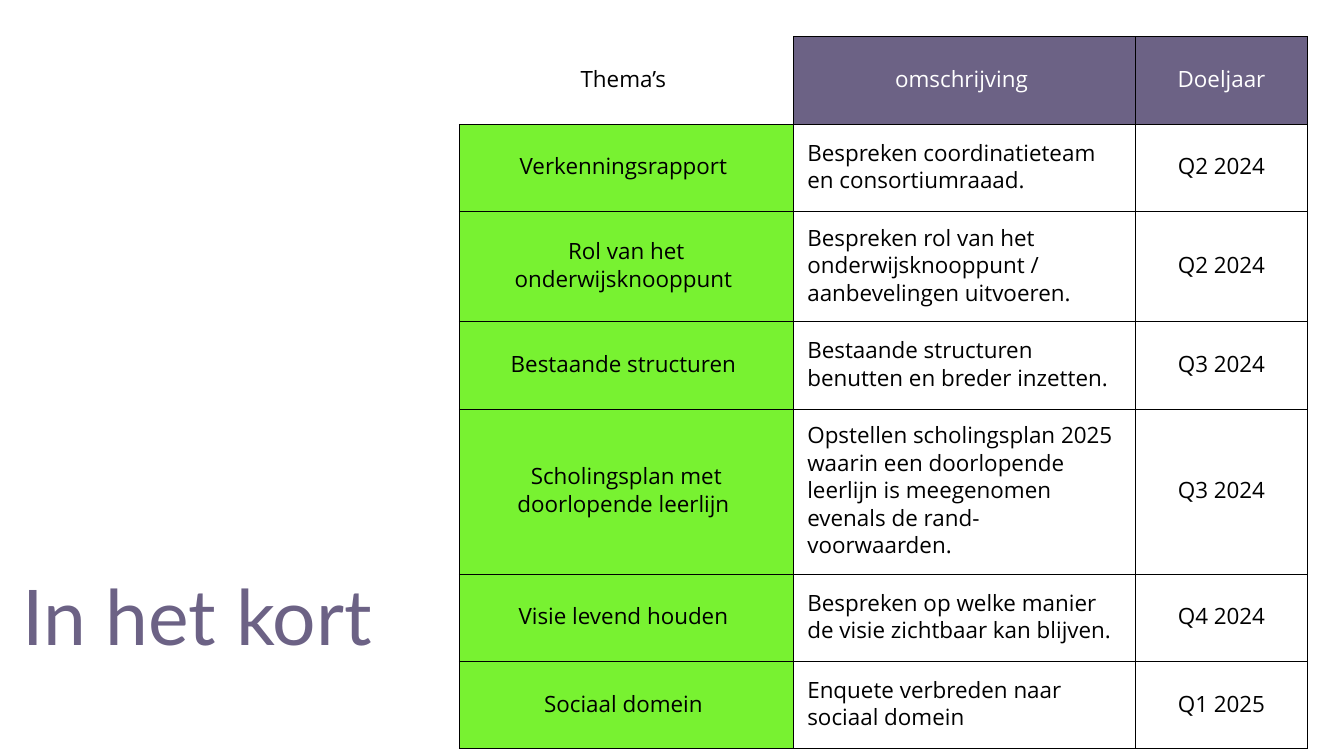
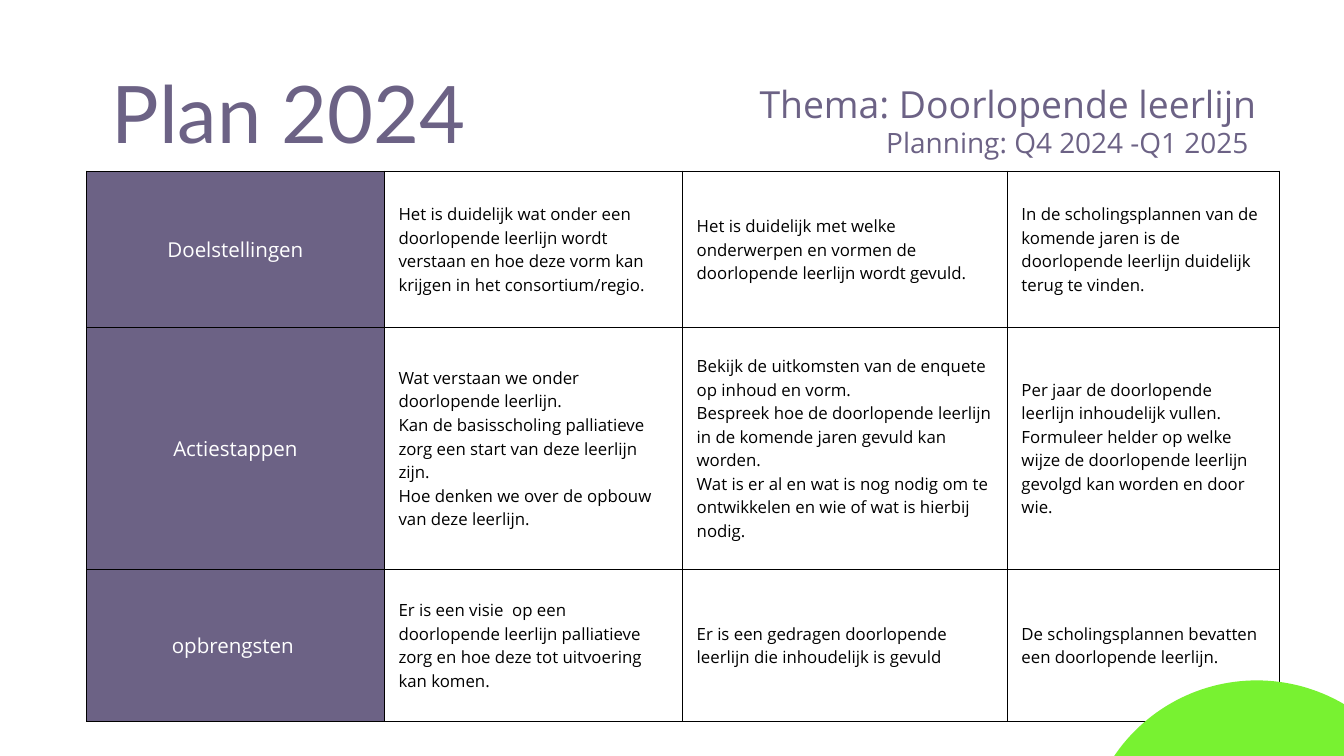
from lxml import etree
from pptx import Presentation
from pptx.dml.color import RGBColor
from pptx.enum.shapes import MSO_SHAPE
from pptx.enum.text import MSO_ANCHOR, PP_ALIGN
from pptx.oxml.ns import qn
from pptx.util import Pt

LEFT, CENTER, RIGHT = PP_ALIGN.LEFT, PP_ALIGN.CENTER, PP_ALIGN.RIGHT
MIDDLE = MSO_ANCHOR.MIDDLE
OVAL = MSO_SHAPE.OVAL

PURPLE, GREEN, WHITE, BLACK = "6C6285", "78F231", "FFFFFF", "000000"
TITLE_FONT, BODY_FONT = "Lato", "Open Sans"
CELL_INSET = 15
BORDER_WIDTH = 0.75

SUMMARY_TITLE = "In het kort"
SUMMARY_HEADER = ("Thema’s ", "omschrijving ", "Doeljaar")
SUMMARY_ROWS = [
    ("Verkenningsrapport ", "Bespreken coordinatieteam en consortiumraaad.", "Q2 2024"),
    ("Rol van het onderwijsknooppunt ",
     "Bespreken rol van het onderwijsknooppunt / aanbevelingen uitvoeren.", "Q2 2024"),
    ("Bestaande structuren ", "Bestaande structuren benutten en breder inzetten.", "Q3 2024"),
    ("Scholingsplan met doorlopende leerlijn ",
     "Opstellen scholingsplan 2025 waarin een doorlopende leerlijn is meegenomen "
     "evenals de rand-voorwaarden.", "Q3 2024"),
    ("Visie levend houden ", "Bespreken op welke manier de visie zichtbaar kan blijven.", "Q4 2024"),
    ("Sociaal domein ", "Enquete verbreden naar sociaal domein", "Q1 2025"),
]
SUMMARY_WIDTHS = (358, 366.5, 184.5)
SUMMARY_HEIGHTS = (94, 93.5, 107.5, 93.5, 152, 93.5, 93.5)

PLAN_TITLE = "Plan 2024"
PLAN_THEME = "Thema: Doorlopende leerlijn"
PLAN_PERIOD = "Planning: Q4 2024 -Q1 2025 "
PLAN_ROWS = [
    ("Doelstellingen",
     ["Het is duidelijk wat onder een doorlopende leerlijn wordt verstaan en hoe deze "
      "vorm kan krijgen in het consortium/regio."],
     ["Het is duidelijk met welke onderwerpen en vormen de doorlopende leerlijn wordt gevuld."],
     ["In de scholingsplannen van de komende jaren is de doorlopende leerlijn duidelijk "
      "terug te vinden."]),
    ("Actiestappen",
     ["Wat verstaan we onder doorlopende leerlijn.",
      "Kan de basisscholing palliatieve zorg een start van deze leerlijn zijn.",
      "Hoe denken we over de opbouw van deze leerlijn."],
     ["Bekijk de uitkomsten van de enquete op inhoud en vorm.",
      "Bespreek hoe de doorlopende leerlijn in de komende jaren gevuld kan worden.",
      "Wat is er al en wat is nog nodig om te ontwikkelen en wie of wat is hierbij nodig."],
     ["Per jaar de doorlopende leerlijn inhoudelijk vullen.",
      "Formuleer helder op welke wijze de doorlopende leerlijn gevolgd kan worden en door wie."]),
    ("opbrengsten ",
     ["Er is een visie  op een doorlopende leerlijn palliatieve zorg en hoe deze tot "
      "uitvoering kan komen."],
     ["Er is een gedragen doorlopende leerlijn die inhoudelijk is gevuld"],
     ["De scholingsplannen bevatten een doorlopende leerlijn."]),
]
PLAN_WIDTHS = (319.5, 319.5, 348, 291)
PLAN_HEIGHTS = (168, 258.5, 163.5)


def rgb(hex_colour):
    return RGBColor.from_string(hex_colour)


def set_attributes(target, values):
    for name, value in values.items():
        setattr(target, name, value)


def write(frame, lines, align=LEFT):
    """Fill a text frame with (text, size, line spacing, font, colour) lines."""
    for index, (text, size, spacing, font, colour) in enumerate(lines):
        paragraph = frame.add_paragraph() if index else frame.paragraphs[0]
        set_attributes(paragraph, {"alignment": align, "line_spacing": Pt(spacing)})
        run = paragraph.add_run()
        run.text = text
        set_attributes(run.font, {"size": Pt(size), "name": font})
        run.font.color.rgb = rgb(colour)


def add_text(slide, box, lines, align=LEFT):
    frame = slide.shapes.add_textbox(*map(Pt, box)).text_frame
    margins = {f"margin_{side}": 0 for side in ("left", "top", "right", "bottom")}
    set_attributes(frame, {"word_wrap": True, **margins})
    write(frame, lines, align)


def add_title(slide, box, text, size, align=LEFT):
    add_text(slide, box, [(text, size, size * 1.2, TITLE_FONT, PURPLE)], align)


def add_grid(slide, left, top, widths, heights):
    frame = slide.shapes.add_table(len(heights), len(widths), Pt(left), Pt(top),
                                   Pt(sum(widths)), Pt(sum(heights)))
    table = frame.table
    set_attributes(table, {"first_row": False, "horz_banding": False})
    for column, width in zip(table.columns, widths):
        column.width = Pt(width)
    for row, height in zip(table.rows, heights):
        row.height = Pt(height)
    return table


def draw_borders(cell, hidden_sides):
    properties = cell._tc.get_or_add_tcPr()
    for index, side in enumerate("LRTB"):
        line = etree.Element(qn(f"a:ln{side}"), w=str(Pt(BORDER_WIDTH)))
        if side in hidden_sides:
            etree.SubElement(line, qn("a:noFill"))
        else:
            fill = etree.SubElement(line, qn("a:solidFill"))
            etree.SubElement(fill, qn("a:srgbClr"), val=BLACK)
        properties.insert(index, line)


def fill_cell(cell, texts, size, colour, fill, align, hidden_sides=""):
    inset = Pt(CELL_INSET)
    set_attributes(cell, {"vertical_anchor": MIDDLE, "margin_left": inset, "margin_right": inset,
                          "margin_top": inset, "margin_bottom": inset})
    if fill:
        cell.fill.solid()
        cell.fill.fore_color.rgb = rgb(fill)
    else:
        cell.fill.background()
    spacing = round(size * (1.225 if size == 24 else 1.4), 1)
    write(cell.text_frame, [(text, size, spacing, BODY_FONT, colour) for text in texts], align)
    draw_borders(cell, hidden_sides)


def build_summary(slide):
    table = add_grid(slide, 492, 39, SUMMARY_WIDTHS, SUMMARY_HEIGHTS)
    for c, heading in enumerate(SUMMARY_HEADER):
        colour, fill, hidden = (WHITE, PURPLE, "") if c else (BLACK, None, "LT")
        fill_cell(table.cell(0, c), [heading], 24, colour, fill, CENTER, hidden)
    column_styles = ((GREEN, CENTER), (WHITE, LEFT), (WHITE, CENTER))
    for r, row in enumerate(SUMMARY_ROWS, 1):
        for c, (text, (fill, align)) in enumerate(zip(row, column_styles)):
            fill_cell(table.cell(r, c), [text], 24, BLACK, fill, align)
    add_title(slide, (24, 609, 403, 98), SUMMARY_TITLE, 82.3)


def build_plan(slide):
    table = add_grid(slide, 92.5, 183, PLAN_WIDTHS, PLAN_HEIGHTS)
    for r, (heading, *columns) in enumerate(PLAN_ROWS):
        fill_cell(table.cell(r, 0), [heading], 22, WHITE, PURPLE, CENTER)
        for c, texts in enumerate(columns, 1):
            fill_cell(table.cell(r, c), texts, 18, BLACK, WHITE, LEFT)
    add_text(slide, (748, 86.5, 598, 85),
             [(PLAN_THEME, 40, 48, BODY_FONT, PURPLE), (PLAN_PERIOD, 30, 36, BODY_FONT, PURPLE)],
             RIGHT)
    add_title(slide, (59, 69, 440, 102), PLAN_TITLE, 85, RIGHT)
    corner = slide.shapes.add_shape(OVAL, Pt(1162), Pt(729), Pt(369), Pt(369))
    corner.shadow.inherit = False
    corner.fill.solid()
    corner.fill.fore_color.rgb = rgb(GREEN)
    corner.line.fill.background()


def main():
    deck = Presentation()
    set_attributes(deck, {"slide_width": Pt(1440), "slide_height": Pt(810)})
    for build in (build_summary, build_plan):
        build(deck.slides.add_slide(deck.slide_layouts[6]))
    deck.save("out.pptx")


if __name__ == "__main__":
    main()
